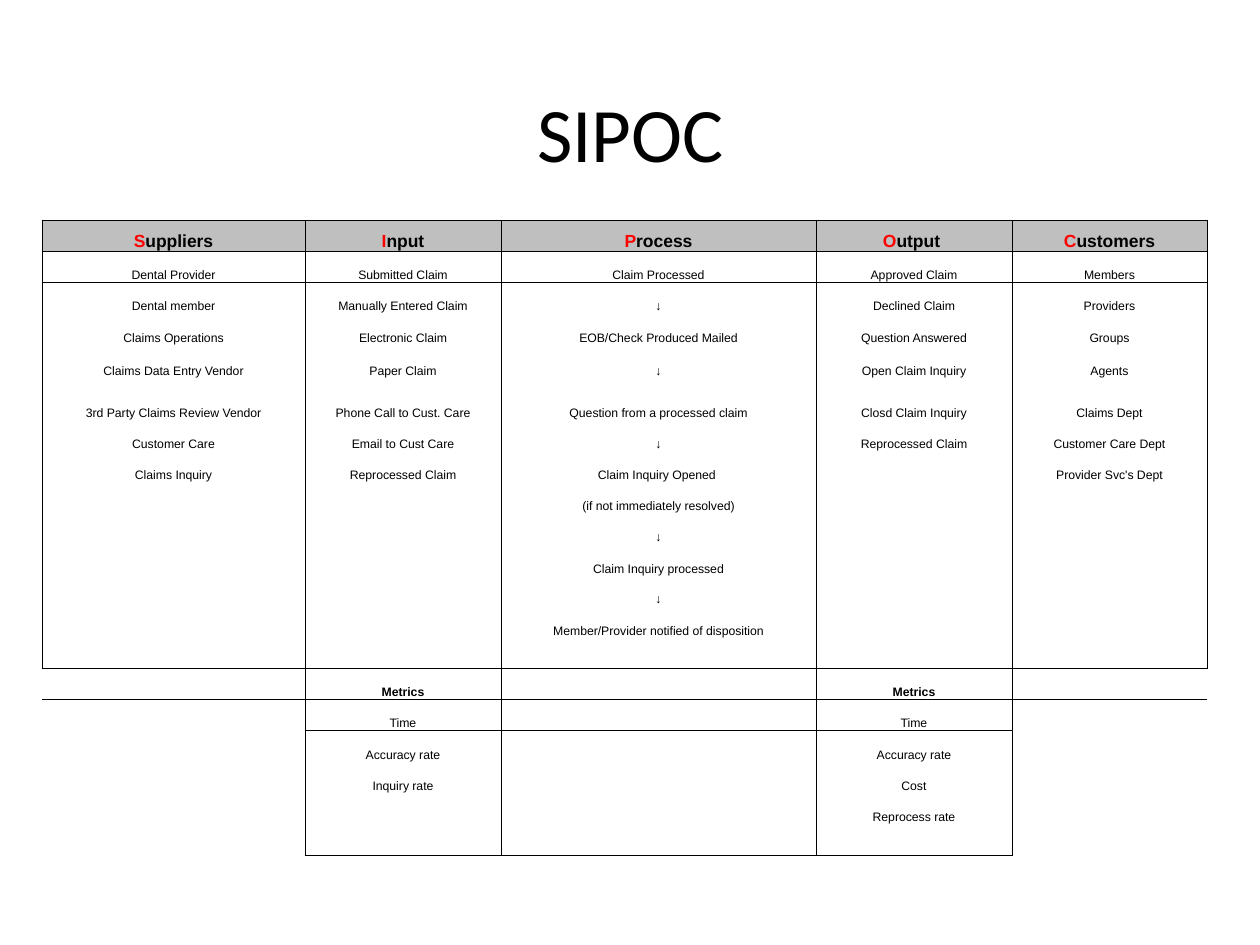
import itertools

import lxml.etree
import pptx
import pptx.dml.color
import pptx.enum.text
import pptx.oxml.ns
import pptx.util

RGB = pptx.dml.color.RGBColor
BLACK = RGB(0, 0, 0)
RED = RGB(255, 0, 0)
GREY = RGB(191, 191, 191)
CENTER = pptx.enum.text.PP_ALIGN.CENTER
MIDDLE = pptx.enum.text.MSO_ANCHOR.MIDDLE
BOTTOM = pptx.enum.text.MSO_ANCHOR.BOTTOM
PLAIN = "{2D5ABB26-0587-4C30-8999-92F81FD0307C}"  # table style with no grid
ARROW = "↓"

HEADS = ["Suppliers", "Input", "Process", "Output ", "Customers"]
LISTS = [
    ["Dental Provider", "Dental member", "Claims Operations",
     "Claims Data Entry Vendor", "3rd Party Claims Review Vendor",
     "Customer Care", "Claims Inquiry"],
    ["Submitted Claim", "Manually Entered Claim", "Electronic Claim",
     "Paper Claim", "Phone Call to Cust. Care", "Email to Cust Care",
     "Reprocessed Claim"],
    ["Claim Processed", ARROW, "EOB/Check Produced Mailed", ARROW,
     "Question from a processed claim", ARROW, "Claim Inquiry Opened ",
     "(if not immediately resolved)", ARROW, "Claim Inquiry processed",
     ARROW, "Member/Provider notified of disposition"],
    ["Approved Claim", "Declined Claim", "Question Answered",
     "Open Claim Inquiry", "Closd Claim Inquiry", "Reprocessed Claim"],
    ["Members", "Providers", "Groups", "Agents", "Claims Dept",
     "Customer Care Dept", "Provider Svc's Dept"],
]
METRICS = {
    1: ["Time", "Accuracy rate", "Inquiry rate"],
    3: ["Time", "Accuracy rate", "Cost", "Reprocess rate"],
}
WIDTHS = [263, 196, 315, 196, 195]
ROWS = 20
METRIC_ROW = 14
ROW_STEP = 31.15
TALLER = {4: 2, 5: 11}


def px(count):
    return pptx.util.Emu(count * 914400 // 126)


def write(para, text, size=7, font="Arial", color=BLACK, bold=False):
    run = para.add_run()
    run.text = text
    run.font.size = pptx.util.Pt(size)
    run.font.name = font
    run.font.color.rgb = color
    run.font.bold = bold
    para.alignment = CENTER


def zone(row, col):
    """Name the framed box that holds a cell, or None outside the frames."""
    if not (0 <= row < ROWS and 0 <= col < len(WIDTHS)):
        return None
    if row < METRIC_ROW:
        return col, "head" if row == 0 else "list"
    if col in (1, 2, 3):
        return col, "label" if row == METRIC_ROW else "metrics"
    return None


class Deck:
    def __init__(self):
        self.file = pptx.Presentation()
        self.file.slide_width = px(1260)
        self.file.slide_height = px(945)
        self.slide = self.file.slides.add_slide(self.file.slide_layouts[5])

    def title(self, text, left, top, width, height):
        shape = self.slide.shapes.title
        shape.left, shape.top = px(left), px(top)
        shape.width, shape.height = px(width), px(height)
        shape.text_frame.vertical_anchor = MIDDLE
        write(shape.text_frame.paragraphs[0], text, size=44, font="Calibri")

    def table(self, left, top, widths, heights):
        frame = self.slide.shapes.add_table(
            len(heights), len(widths), px(left), px(top),
            px(sum(widths)), px(sum(heights)))
        table = frame.table
        table.first_row = table.horz_banding = False
        style = frame._element.find(".//" + pptx.oxml.ns.qn("a:tableStyleId"))
        style.text = PLAIN
        for part, size in itertools.chain(zip(table.columns, widths)):
            part.width = px(size)
        for part, size in zip(table.rows, heights):
            part.height = px(size)
        for row, col in itertools.product(range(len(heights)), range(len(widths))):
            self.cell(table.cell(row, col), row, col)
        return table

    def cell(self, cell, row, col):
        cell.margin_left = cell.margin_right = 0
        cell.margin_top = cell.margin_bottom = 0
        cell.vertical_anchor = BOTTOM
        end = cell.text_frame.paragraphs[0]._p.get_or_add_endParaRPr()
        end.set("sz", "700")
        sides = {"lnL": (row, col - 1), "lnR": (row, col + 1),
                 "lnT": (row - 1, col), "lnB": (row + 1, col)}
        for side, near in sides.items():
            if zone(row, col) != zone(*near):
                self.border(cell, side)

    def border(self, cell, side):
        qn = pptx.oxml.ns.qn
        line = lxml.etree.SubElement(
            cell._tc.get_or_add_tcPr(), qn("a:" + side), w="6350")
        fill = lxml.etree.SubElement(line, qn("a:solidFill"))
        lxml.etree.SubElement(fill, qn("a:srgbClr"), val=str(BLACK))

    def head(self, cell, text):
        cell.fill.solid()
        cell.fill.fore_color.rgb = GREY
        para = cell.text_frame.paragraphs[0]
        write(para, text[0], size=10, color=RED, bold=True)
        write(para, text[1:], size=10, bold=True)

    def items(self, table, row, col, texts):
        for step, text in enumerate(texts):
            para = table.cell(row + step, col).text_frame.paragraphs[0]
            write(para, text, font="Times New Roman" if text == ARROW else "Arial")


def main():
    deck = Deck()
    deck.title("SIPOC", 95, 53, 1071, 158)
    edges = [round(ROW_STEP * row) for row in range(ROWS + 1)]
    heights = [low - high + TALLER.get(row, 0)
               for row, (high, low) in enumerate(itertools.pairwise(edges))]
    table = deck.table(42, 220, WIDTHS, heights)
    for col, (head, texts) in enumerate(zip(HEADS, LISTS)):
        deck.head(table.cell(0, col), head)
        deck.items(table, 1, col, texts)
    for col, texts in METRICS.items():
        label = table.cell(METRIC_ROW, col).text_frame.paragraphs[0]
        write(label, "Metrics", bold=True)
        deck.items(table, METRIC_ROW + 1, col, texts)
    deck.file.save("out.pptx")


if __name__ == "__main__":
    main()
